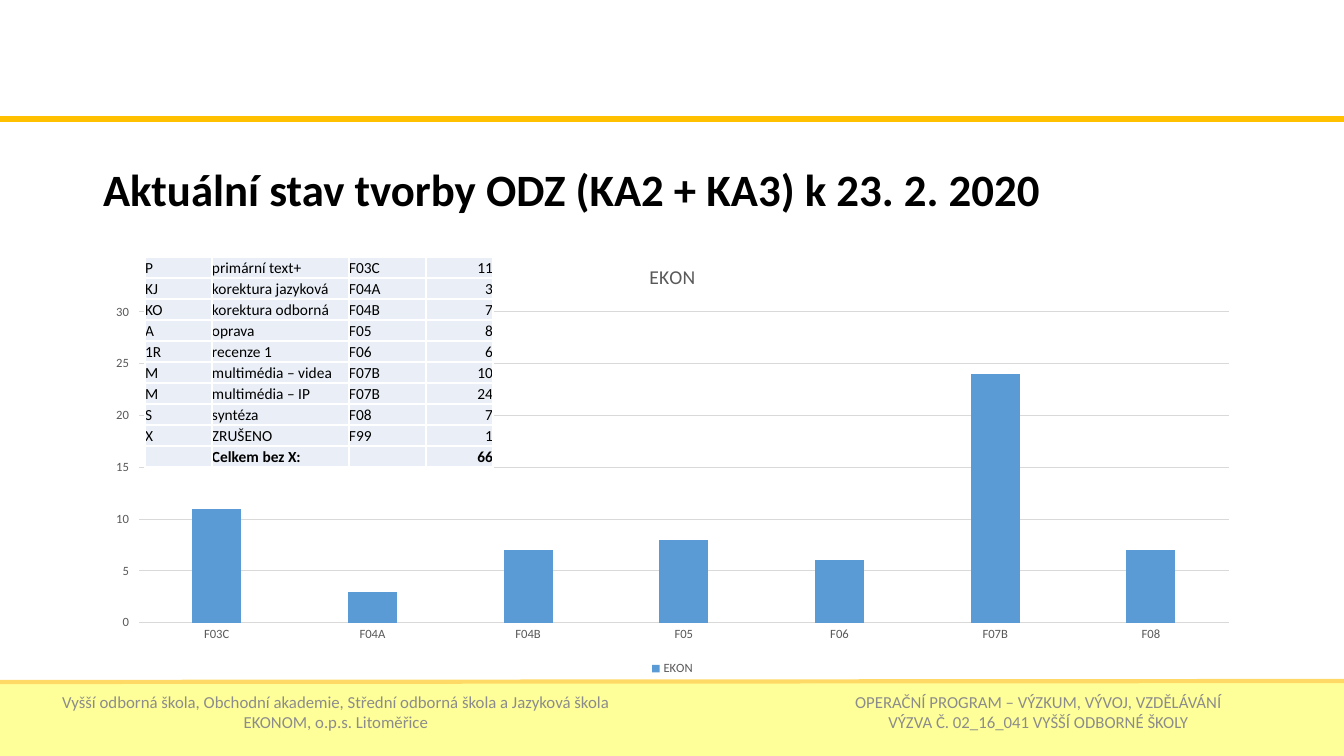
from dataclasses import dataclass
from typing import Any

from lxml import etree
from pptx import Presentation
from pptx.chart.data import CategoryChartData
from pptx.dml.color import RGBColor
from pptx.enum.chart import XL_CHART_TYPE, XL_LEGEND_POSITION, XL_TICK_MARK
from pptx.enum.shapes import MSO_CONNECTOR, MSO_SHAPE
from pptx.enum.text import MSO_ANCHOR, PP_ALIGN
from pptx.oxml.ns import qn
from pptx.util import Emu, Pt

COLUMNS = XL_CHART_TYPE.COLUMN_CLUSTERED
LEGEND_BOTTOM = XL_LEGEND_POSITION.BOTTOM
TICK_NONE, TICK_OUT = XL_TICK_MARK.NONE, XL_TICK_MARK.OUTSIDE
STRAIGHT, RECT = MSO_CONNECTOR.STRAIGHT, MSO_SHAPE.RECTANGLE
MIDDLE, BOTTOM = MSO_ANCHOR.MIDDLE, MSO_ANCHOR.BOTTOM
LEFT, CENTER, RIGHT = PP_ALIGN.LEFT, PP_ALIGN.CENTER, PP_ALIGN.RIGHT
EMU_PER_PX = 914400 / 100.8


@dataclass(frozen=True)
class Theme:
    font: str = "Calibri"
    text: str = "000000"
    footer_text: str = "8C8C8C"
    chart_text: str = "595959"
    grid: str = "D9D9D9"
    bar: str = "5B9BD5"
    cell: str = "EAEFF7"
    border: str = "FFFFFF"
    footer: str = "FFFF99"
    footer_rule: str = "FFD966"
    header_rule: str = "FFC000"
    title_size: int = 32
    footer_size: int = 12
    table_size: int = 11
    chart_title_size: int = 14
    chart_size: int = 9


@dataclass(frozen=True)
class Box:
    x: int
    y: int
    w: int
    h: int


@dataclass(frozen=True)
class Rule:
    start: tuple[int, int]
    end: tuple[int, int]
    color: str
    width: float


@dataclass(frozen=True)
class FooterText:
    box: Box
    lines: tuple[str, str]


T = Theme()
TITLE = "Aktuální stav tvorby ODZ (KA2 + KA3) k 23. 2. 2020"
TITLE_BOX = Box(93, 125, 1159, 134)
FOOTER_BOX = Box(0, 682, 1344, 74)
CHART_BOX = Box(93, 246, 1159, 434)
RULES = [
    Rule((0, 682), (1344, 681), T.footer_rule, 3),
    Rule((0, 119), (1344, 119), T.header_rule, 4.5),
]
FOOTERS = [
    FooterText(Box(15, 684, 642, 56), (
        "Vyšší odborná škola, Obchodní akademie, Střední odborná škola a Jazyková škola",
        "EKONOM, o.p.s. Litoměřice")),
    FooterText(Box(760, 682, 557, 60), (
        "OPERAČNÍ PROGRAM – VÝZKUM, VÝVOJ, VZDĚLÁVÁNÍ",
        "VÝZVA Č. 02_16_041 VYŠŠÍ ODBORNÉ ŠKOLY")),
]
SERIES = "EKON"
COUNTS = {"F03C": 11, "F04A": 3, "F04B": 7, "F05": 8, "F06": 6, "F07B": 24, "F08": 7}
COL_WIDTHS = [67, 137, 77, 67]
ROW_HEIGHT = 21
TABLE_BOX = Box(145, 257, sum(COL_WIDTHS), 10 * ROW_HEIGHT)
TABLE_ROWS = [
    ("P", "primární text+", "F03C", "11"),
    ("KJ", "korektura jazyková", "F04A", "3"),
    ("KO", "korektura odborná", "F04B", "7"),
    ("A", "oprava", "F05", "8"),
    ("1R", "recenze 1", "F06", "6"),
    ("M", "multimédia – videa", "F07B", "10"),
    ("M", "multimédia – IP", "F07B", "24"),
    ("S", "syntéza", "F08", "7"),
    ("X", "ZRUŠENO", "F99", "1"),
    ("", "Celkem bez X:", "", "66"),
]


def px(n: int) -> Emu:
    return Emu(round(n * EMU_PER_PX))


def place(box: Box) -> tuple[Emu, ...]:
    return tuple(px(n) for n in (box.x, box.y, box.w, box.h))


def rgb(color: str) -> RGBColor:
    return RGBColor.from_string(color)


def apply(target: Any, values: dict[str, Any]) -> None:
    for name, value in values.items():
        setattr(target, name, value)


def style(font: Any, size: int, color: str, bold: bool = False) -> None:
    apply(font, {"name": T.font, "size": Pt(size), "bold": bold})
    font.color.rgb = rgb(color)


def stroke(line: Any, color: str, width: float) -> None:
    line.color.rgb = rgb(color)
    line.width = Pt(width)


def add_rule(s: Any, rule: Rule) -> None:
    c = s.shapes.add_connector(STRAIGHT, *(px(n) for n in rule.start + rule.end))
    stroke(c.line, rule.color, rule.width)
    etree.SubElement(c._element.spPr, qn("a:effectLst"))


def add_footer_text(s: Any, footer: FooterText) -> None:
    tf = s.shapes.add_textbox(*place(footer.box)).text_frame
    apply(tf, {"word_wrap": True, "vertical_anchor": MIDDLE})
    for i, line in enumerate(footer.lines):
        p = tf.add_paragraph() if i else tf.paragraphs[0]
        p.alignment = CENTER
        r = p.add_run()
        r.text = line
        style(r.font, T.footer_size, T.footer_text)


def add_counts_chart(s: Any) -> None:
    data = CategoryChartData()
    data.categories = list(COUNTS)
    data.add_series(SERIES, list(COUNTS.values()))
    chart = s.shapes.add_chart(COLUMNS, *place(CHART_BOX), data).chart
    style(chart.font, T.chart_size, T.chart_text)
    apply(chart, {"has_title": True, "has_legend": True})
    tf = chart.chart_title.text_frame
    tf.text = SERIES
    style(tf.paragraphs[0].runs[0].font, T.chart_title_size, T.chart_text)
    apply(chart.legend, {"position": LEGEND_BOTTOM, "include_in_layout": False})
    plot = chart.plots[0]
    apply(plot, {"gap_width": 219, "overlap": -27, "vary_by_categories": False})
    fill = plot.series[0].format.fill
    fill.solid()
    fill.fore_color.rgb = rgb(T.bar)
    cat, val = chart.category_axis, chart.value_axis
    cat.major_tick_mark = TICK_NONE
    stroke(cat.format.line, T.grid, 0.75)
    apply(val, {"major_tick_mark": TICK_OUT, "minimum_scale": 0,
                "maximum_scale": 30, "major_unit": 5})
    val.format.line.fill.background()
    stroke(val.major_gridlines.format.line, T.grid, 0.75)


def format_cell(cell: Any, text: str, align: PP_ALIGN, bold: bool) -> None:
    margins = ("margin_left", "margin_right", "margin_top", "margin_bottom")
    apply(cell, {"vertical_anchor": BOTTOM, **dict.fromkeys(margins, 0)})
    p = cell.text_frame.paragraphs[0]
    p.alignment = align
    if text:
        r = p.add_run()
        r.text = text
        style(r.font, T.table_size, T.text, bold)
    else:  # keeps an empty cell as low as its row
        etree.SubElement(p._p, qn("a:endParaRPr"), sz=str(T.table_size * 100))
    tcPr = cell._tc.get_or_add_tcPr()
    for side in ("lnL", "lnR", "lnT", "lnB"):
        ln = etree.SubElement(tcPr, qn(f"a:{side}"), w=str(Pt(1)))
        etree.SubElement(etree.SubElement(ln, qn("a:solidFill")),
                         qn("a:srgbClr"), val=T.border)
    cell.fill.solid()
    cell.fill.fore_color.rgb = rgb(T.cell)


def add_stage_table(s: Any) -> None:
    table = s.shapes.add_table(len(TABLE_ROWS), len(COL_WIDTHS), *place(TABLE_BOX)).table
    apply(table, {"first_row": False, "horz_banding": False})
    for col, width in zip(table.columns, COL_WIDTHS):
        col.width = px(width)
    for i, row in enumerate(TABLE_ROWS):
        table.rows[i].height = px(ROW_HEIGHT)
        for j, text in enumerate(row):
            format_cell(table.cell(i, j), text, RIGHT if j == 3 else LEFT,
                        i == len(TABLE_ROWS) - 1)


def main() -> None:
    prs = Presentation()
    apply(prs, {"slide_width": px(1344), "slide_height": px(756)})
    s = prs.slides.add_slide(prs.slide_layouts[5])

    # Footer band and rules
    band = s.shapes.add_shape(RECT, *place(FOOTER_BOX))
    band.shadow.inherit = False
    band.fill.solid()
    band.fill.fore_color.rgb = rgb(T.footer)
    stroke(band.line, T.footer, 1)
    for rule in RULES:
        add_rule(s, rule)
    for footer in FOOTERS:
        add_footer_text(s, footer)

    # Title
    title = s.shapes.title
    apply(title, dict(zip(("left", "top", "width", "height"), place(TITLE_BOX))))
    tf = title.text_frame
    apply(tf, {"text": TITLE, "word_wrap": True, "vertical_anchor": MIDDLE})
    p = tf.paragraphs[0]
    apply(p, {"alignment": LEFT, "line_spacing": 0.9})
    style(p.runs[0].font, T.title_size, T.text, bold=True)

    # Chart with the table over it
    add_counts_chart(s)
    add_stage_table(s)
    prs.save("out.pptx")


if __name__ == "__main__":
    main()
